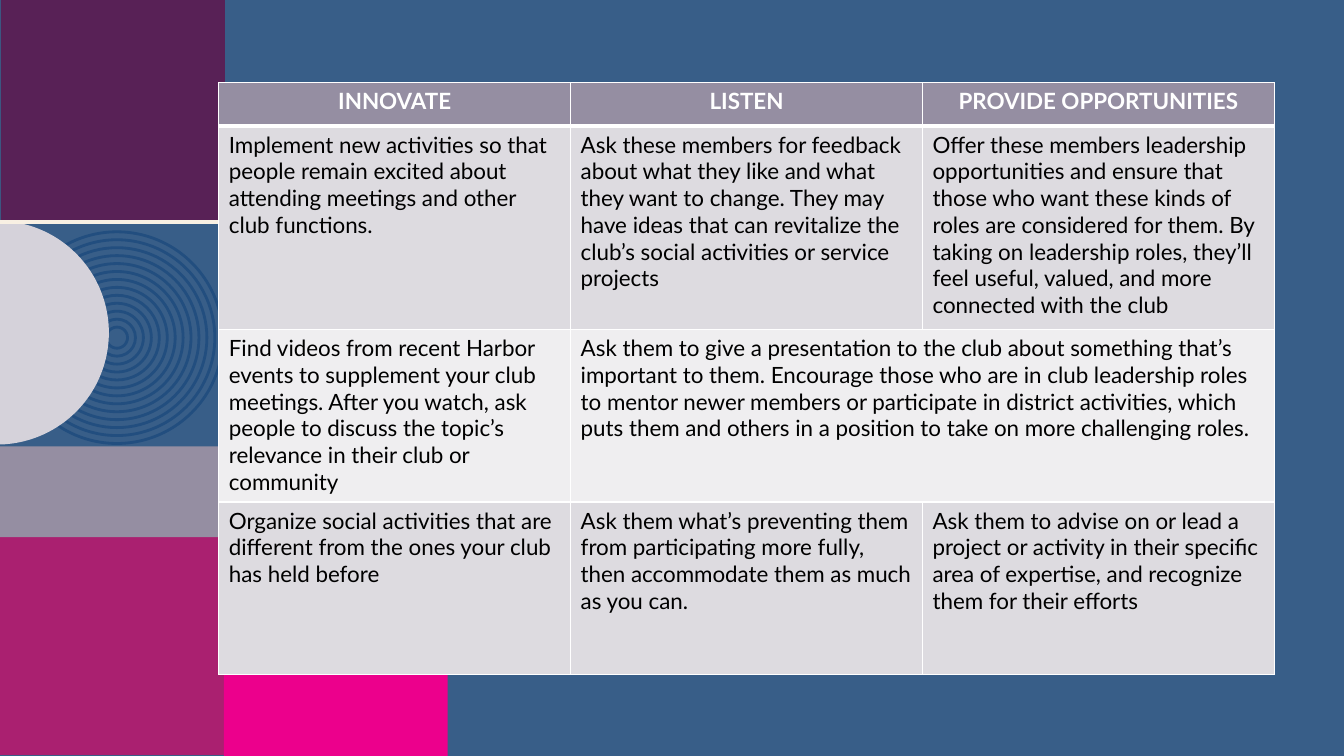
from dataclasses import dataclass
from math import cos, pi, sin

from lxml.etree import SubElement
from pptx import Presentation
from pptx.dml.color import RGBColor
from pptx.enum.shapes import MSO_CONNECTOR, MSO_SHAPE
from pptx.enum.text import PP_ALIGN
from pptx.oxml.ns import qn
from pptx.util import Inches, Pt


@dataclass(frozen=True)
class Theme:
    """Colours, font and type size of the slide."""
    back: str = "385E88"
    plum: str = "582156"
    berry: str = "AA2070"
    pink: str = "EC008C"
    ring: str = "224E7F"
    mauve: str = "958EA2"
    mist: str = "D5D2DA"
    cream: str = "F8F0E3"
    dark: str = "DDDBE0"
    light: str = "EFEEF0"
    white: str = "FFFFFF"
    black: str = "000000"
    font: str = "Lato"
    size: int = 16


def put(item, form):
    """Set each attribute named in a dict of format values."""
    for name, value in form.items():
        setattr(item, name, value)


def rgb(code):
    """Turn a hex code into a colour."""
    return RGBColor.from_string(code)


@dataclass
class Board:
    """Hold the style and the current slide."""
    theme: Theme
    slide: object

    def paint(self, shape, fill=None, line=None, width=2):
        """Give a shape its fill and outline."""
        shape.shadow.inherit = False
        if fill:
            shape.fill.solid()
            shape.fill.fore_color.rgb = rgb(fill)
        else:
            shape.fill.background()
        if line:
            shape.line.color.rgb = rgb(line)
            shape.line.width = Pt(width)
        else:
            shape.line.fill.background()

    def ground(self, fill):
        """Colour the slide background."""
        back = self.slide.background.fill
        back.solid()
        back.fore_color.rgb = rgb(fill)

    def block(self, box, fill):
        """Add a plain rectangle."""
        shape = self.slide.shapes.add_shape(MSO_SHAPE.RECTANGLE, *map(Inches, box))
        self.paint(shape, fill)

    def rings(self, x, y, wide, step, count):
        """Add rings that share one centre."""
        for i in range(count):
            size = wide - i * step
            box = x - size / 2, y - size / 2, size, size
            shape = self.slide.shapes.add_shape(MSO_SHAPE.OVAL, *map(Inches, box))
            self.paint(shape, line=self.theme.ring)

    def dome(self, x, y, size, fill, parts=90):
        """Add a half disc that faces right."""
        turns = [pi * i / parts - pi / 2 for i in range(parts + 1)]
        spots = [(Inches(x + size * cos(t)), Inches(y + size * sin(t))) for t in turns]
        form = self.slide.shapes.build_freeform(*spots[0])
        form.add_line_segments(spots[1:], close=True)
        self.paint(form.convert_to_shape(), fill)

    def rule(self, start, end, fill, width):
        """Add a straight line."""
        line = self.slide.shapes.add_connector(
            MSO_CONNECTOR.STRAIGHT, *map(Inches, start + end))
        line.line.color.rgb = rgb(fill)
        line.line.width = Pt(width)
        SubElement(line._element.spPr, qn("a:effectLst"))

    def edge(self, cell, top, base):
        """Draw the four borders of a cell."""
        props = cell._tc.get_or_add_tcPr()
        for side, width in zip("LRTB", (1, 1, top, base)):
            line = SubElement(props, qn(f"a:ln{side}"), w=str(Pt(width)))
            fill = SubElement(line, qn("a:solidFill"))
            SubElement(fill, qn("a:srgbClr"), val=self.theme.white)

    def cell(self, cell, text, row, fill):
        """Fill and write one cell."""
        head = row == 0
        self.edge(cell, 3 if row == 1 else 1, 3 if head else 1)
        cell.fill.solid()
        cell.fill.fore_color.rgb = rgb(fill)
        if text is None:
            return
        cell.text = text
        para = cell.text_frame.paragraphs[0]
        para.alignment = PP_ALIGN.CENTER if head else PP_ALIGN.LEFT
        font = para.runs[0].font
        put(font, {"name": self.theme.font, "size": Pt(self.theme.size), "bold": head})
        font.color.rgb = rgb(self.theme.white if head else self.theme.black)

    def table(self, box, highs, rows, fills):
        """Add a table, joining each None cell to the one before it."""
        table = self.slide.shapes.add_table(
            len(rows), len(rows[0]), *map(Inches, box)).table
        put(table, {"first_row": True, "horz_banding": False})
        for col in table.columns:
            col.width = Inches(box[2] / len(rows[0]))
        for r, (high, texts) in enumerate(zip(highs, rows)):
            table.rows[r].height = Inches(high)
            for c, text in enumerate(texts):
                self.cell(table.cell(r, c), text, r, fills[r])
                if text is None:
                    table.cell(r, c - 1).merge(table.cell(r, c))


ROWS = [
    ["INNOVATE", "LISTEN", "PROVIDE OPPORTUNITIES"],
    ["Implement new activities so that people remain excited about attending "
     "meetings and other club functions.",
     "Ask these members for feedback about what they like and what they want to "
     "change. They may have ideas that can revitalize the club’s social activities "
     "or service projects",
     "Offer these members leadership opportunities and ensure that those who want "
     "these kinds of roles are considered for them. By taking on leadership roles, "
     "they’ll feel useful, valued, and more connected with the club"],
    ["Find videos from recent Harbor events to supplement your club meetings. After "
     "you watch, ask people to discuss the topic’s relevance in their club or community",
     "Ask them to give a presentation to the club about something that’s important to "
     "them. Encourage those who are in club leadership roles to mentor newer members or "
     "participate in district activities, which puts them and others in a position to "
     "take on more challenging roles.",
     None],
    ["Organize social activities that are different from the ones your club has held "
     "before",
     "Ask them what’s preventing them from participating more fully, then accommodate "
     "them as much as you can.",
     "Ask them to advise on or lead a project or activity in their specific area of "
     "expertise, and recognize them for their efforts"],
]


def main():
    """Build and save the slide."""
    deck = Presentation()
    put(deck, {"slide_width": Inches(13.33), "slide_height": Inches(7.5)})
    theme = Theme()
    board = Board(theme, deck.slides.add_slide(deck.slide_layouts[6]))
    side = 2.22
    board.ground(theme.back)
    board.block((0.01, 0, side, side), theme.plum)
    board.block((0, 5.27, side, side), theme.berry)
    board.block((side, 6.61, side, 0.89), theme.pink)
    board.block((0, 2.19, side, side), theme.back)
    board.rings(1.16, 3.35, 2.1, 0.1575, 13)
    board.block((0, 4.43, side, 0.9), theme.mauve)
    board.dome(-0.03, 3.3, 1.11, theme.mist)
    board.rule((0, 2.2), (3.26, 2.2), theme.cream, 3)
    fills = theme.mauve, theme.dark, theme.light, theme.dark
    board.table((2.17, 0.82, 10.47, 5.87), (0.43, 2.02, 1.71, 1.71), ROWS, fills)
    deck.save("out.pptx")


if __name__ == "__main__":
    main()
